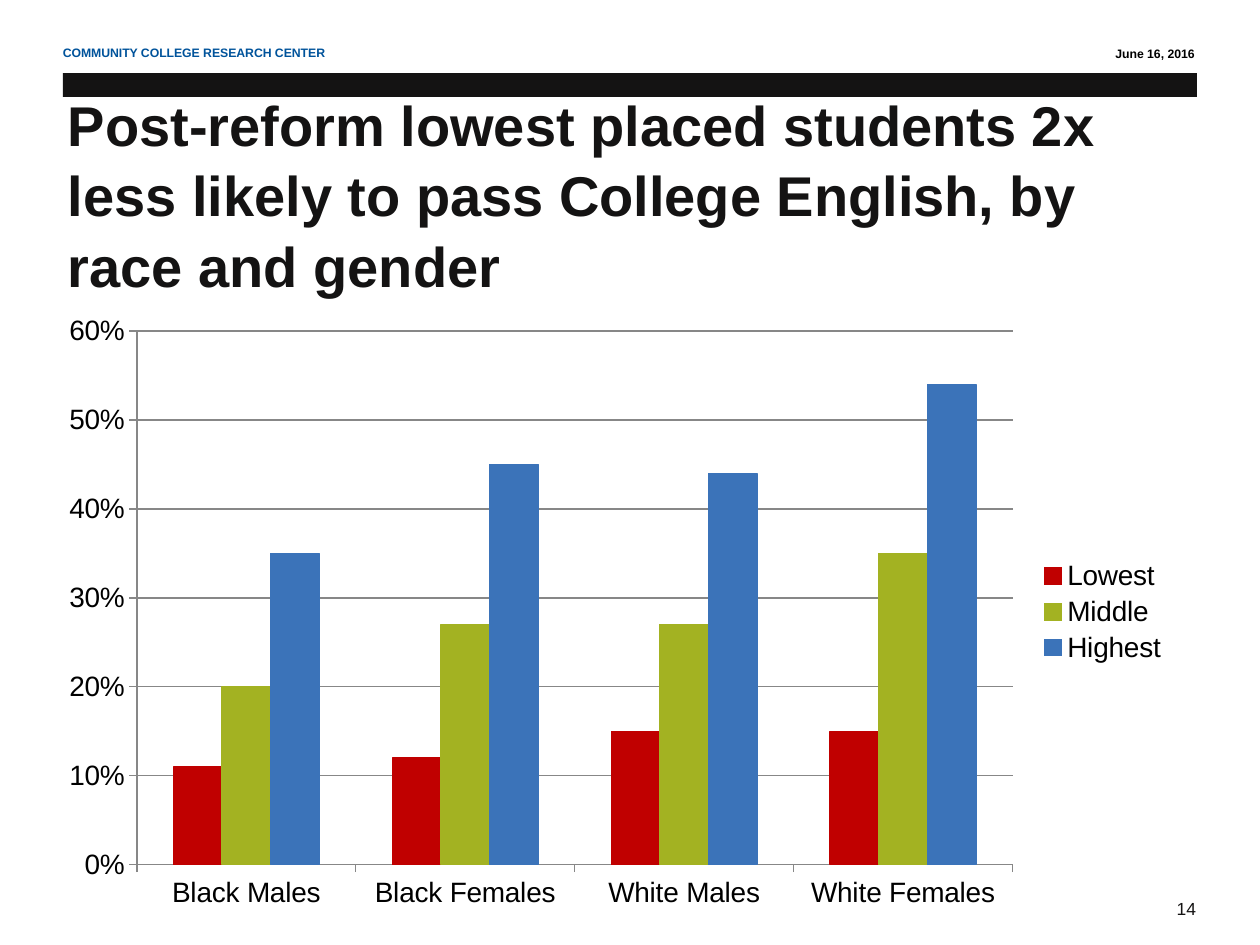
from dataclasses import dataclass

from pptx import Presentation
from pptx.chart.data import CategoryChartData
from pptx.dml.color import RGBColor
from pptx.enum.chart import XL_CHART_TYPE as ChartType
from pptx.enum.chart import XL_LEGEND_POSITION as LegendPos
from pptx.enum.chart import XL_TICK_MARK as Tick
from pptx.enum.shapes import MSO_SHAPE as Shape
from pptx.enum.text import MSO_ANCHOR as Anchor
from pptx.enum.text import PP_ALIGN as Align
from pptx.slide import Slide
from pptx.util import Inches, Pt


@dataclass(frozen=True)
class Theme:
    font: str = "Arial"
    ink: str = "141313"
    black: str = "000000"
    brand: str = "00539B"
    grid: str = "878787"
    lowest: str = "C00000"
    middle: str = "A3B222"
    highest: str = "3B73B9"
    title_pt: float = 32
    chart_pt: float = 16
    page_pt: float = 10
    header_pt: float = 7


@dataclass(frozen=True)
class Box:
    left: float
    top: float
    width: float
    height: float

    def lengths(self) -> list[Inches]:
        return [Inches(v) for v in (self.left, self.top, self.width, self.height)]


@dataclass(frozen=True)
class Label:
    text: str
    box: Box
    size: float
    color: str
    bold: bool = True
    align: Align = Align.LEFT
    anchor: Anchor = Anchor.TOP
    spacing: float = 1.0


@dataclass(frozen=True)
class Series:
    name: str
    values: tuple[float, ...]
    color: str


THEME = Theme()

LABELS = [
    Label("June 16, 2016", Box(5.58, 0.32, 4, 0.22), THEME.header_pt, THEME.black,
          align=Align.RIGHT),
    Label("14", Box(9.24, 7.08, 0.46, 0.27), THEME.page_pt, THEME.ink, bold=False),
    Label("COMMUNITY COLLEGE RESEARCH CENTER", Box(0.4, 0.31, 3.56, 0.22),
          THEME.header_pt, THEME.brand),
    Label("Post-reform lowest placed students 2x less likely to pass College English, "
          "by race and gender", Box(0.44, 0.9, 9, 1.26), THEME.title_pt, THEME.ink,
          anchor=Anchor.MIDDLE, spacing=1.05),
]
HEADER_BAR = Box(0.5, 0.58, 9, 0.19)
CHART_BOX = Box(0.37, 2.41, 9, 4.89)
GROUPS = ("Black Males", "Black Females", "White Males", "White Females")
PLACEMENTS = [
    Series("Lowest", (0.11, 0.12, 0.15, 0.15), THEME.lowest),
    Series("Middle", (0.2, 0.27, 0.27, 0.35), THEME.middle),
    Series("Highest", (0.35, 0.45, 0.44, 0.54), THEME.highest),
]


def rgb(color: str) -> RGBColor:
    return RGBColor.from_string(color)


def add_label(s: Slide, label: Label) -> None:
    tf = s.shapes.add_textbox(*label.box.lengths()).text_frame
    tf.word_wrap = True
    tf.vertical_anchor = label.anchor
    p = tf.paragraphs[0]
    p.alignment = label.align
    p.line_spacing = label.spacing
    r = p.add_run()
    r.text = label.text
    r.font.name = THEME.font
    r.font.size = Pt(label.size)
    r.font.bold = label.bold
    r.font.color.rgb = rgb(label.color)


def add_bar(s: Slide, box: Box, color: str) -> None:
    sp = s.shapes.add_shape(Shape.RECTANGLE, *box.lengths())
    sp.shadow.inherit = False
    sp.fill.solid()
    sp.fill.fore_color.rgb = rgb(color)
    sp.line.fill.background()


def add_column_chart(s: Slide, box: Box, groups: tuple[str, ...],
                     series: list[Series]) -> None:
    data = CategoryChartData(number_format="0%")
    data.categories = groups
    for item in series:
        data.add_series(item.name, item.values)
    chart = s.shapes.add_chart(ChartType.COLUMN_CLUSTERED, *box.lengths(), data).chart
    chart.has_title = False
    chart.font.name = THEME.font
    chart.font.size = Pt(THEME.chart_pt)
    chart.font.color.rgb = rgb(THEME.black)

    chart.has_legend = True
    chart.legend.position = LegendPos.RIGHT
    chart.legend.include_in_layout = False

    plot = chart.plots[0]
    plot.gap_width = 150
    plot.vary_by_categories = False
    for column, item in zip(plot.series, series):
        column.format.fill.solid()
        column.format.fill.fore_color.rgb = rgb(item.color)
        column.format.line.color.rgb = rgb(item.color)
        column.format.line.width = Pt(0.75)

    values = chart.value_axis
    values.minimum_scale, values.maximum_scale, values.major_unit = 0, 0.6, 0.1
    values.has_major_gridlines = True
    values.tick_labels.number_format = "0%"
    values.tick_labels.number_format_is_linked = False
    for axis in (chart.category_axis, values):
        axis.major_tick_mark = Tick.OUTSIDE
        axis.minor_tick_mark = Tick.NONE
        axis.tick_labels.font.size = Pt(THEME.chart_pt)
    for part in (chart.category_axis, values, values.major_gridlines):
        part.format.line.color.rgb = rgb(THEME.grid)
        part.format.line.width = Pt(0.75)


def main() -> None:
    prs = Presentation()
    prs.slide_width, prs.slide_height = Inches(10), Inches(7.5)
    s = prs.slides.add_slide(prs.slide_layouts[6])
    add_bar(s, HEADER_BAR, THEME.ink)
    add_column_chart(s, CHART_BOX, GROUPS, PLACEMENTS)
    for label in LABELS:
        add_label(s, label)
    prs.save("out.pptx")


if __name__ == "__main__":
    main()
